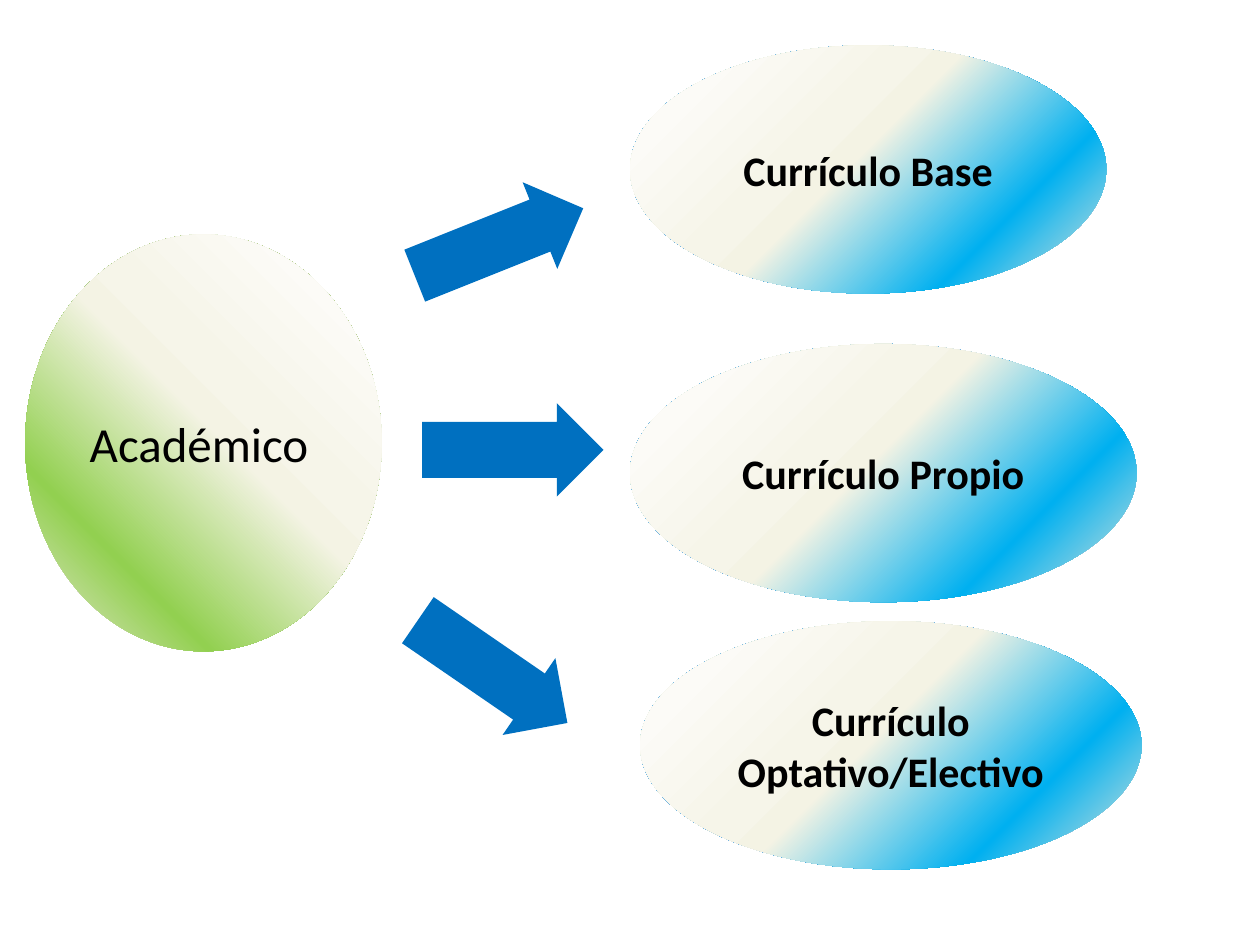
"""Build a slide linking an academic area to three kinds of curriculum."""
from lxml import etree
from pptx import Presentation
from pptx import util as u
from pptx.dml.color import RGBColor
from pptx.enum import shapes, text
from pptx.oxml import ns

WIDE, HIGH = u.Inches(10), u.Inches(7.5)
BLACK = RGBColor(0x00, 0x00, 0x00)
BLUE = RGBColor(0x00, 0x70, 0xC0)
GREEN = RGBColor(0x92, 0xD0, 0x50)
SKY = RGBColor(0x00, 0xB0, 0xF0)
PALE = [
    (0, RGBColor(0xFF, 0xFF, 0xFF)),
    (14, RGBColor(0xFC, 0xFB, 0xF7)),
    (38, RGBColor(0xF6, 0xF5, 0xE9)),
    (47, RGBColor(0xF4, 0xF3, 0xE4)),
]
SAND = RGBColor(0xEA, 0xE7, 0xD8)
LEFT, RIGHT = ("l", "b"), ("r", "b")


def place(slide, kind, box):
    """Add a plain shape in a box given in percent of the slide."""
    x, y, w, h = box
    shape = slide.shapes.add_shape(
        kind, int(WIDE * x / 100), int(HIGH * y / 100),
        int(WIDE * w / 100), int(HIGH * h / 100))
    shape.shadow.inherit = False
    shape.line.fill.background()
    return shape


def shade(shape, tint, sides):
    """Fill a shape with a circular gradient that starts in one corner."""
    shape.fill.background()
    old = shape._element.spPr.find(ns.qn("a:noFill"))
    grad = etree.Element(ns.qn("a:gradFill"), rotWithShape="1")
    stops = etree.SubElement(grad, ns.qn("a:gsLst"))
    for spot, color in PALE + [(76, tint), (100, SAND)]:
        stop = etree.SubElement(stops, ns.qn("a:gs"), pos=str(spot * 1000))
        etree.SubElement(stop, ns.qn("a:srgbClr"), val=str(color))
    ring = etree.SubElement(grad, ns.qn("a:path"), path="circle")
    etree.SubElement(ring, ns.qn("a:fillToRect"), {side: "100000" for side in sides})
    old.getparent().replace(old, grad)


def bubble(slide, box, words, tint, sides, size, bold, align):
    """Draw a shaded oval with its label."""
    oval = place(slide, shapes.MSO_SHAPE.FLOWCHART_CONNECTOR, box)
    shade(oval, tint, sides)
    frame = oval.text_frame
    frame.word_wrap = True
    frame.vertical_anchor = text.MSO_ANCHOR.MIDDLE
    frame.text = words
    line = frame.paragraphs[0]
    line.alignment = align
    font = line.runs[0].font
    font.name, font.size, font.bold = "Calibri", u.Pt(size), bold
    font.color.rgb = BLACK


def arrow(slide, x, y, turn):
    """Draw a turned block arrow."""
    shape = place(slide, shapes.MSO_SHAPE.LEFT_ARROW, (x, y, 14.4, 9.87))
    shape.adjustments[0], shape.adjustments[1] = 0.6, 0.5
    shape.rotation = turn
    shape.fill.solid()
    shape.fill.fore_color.rgb = BLUE


def main():
    """Compose and save the slide."""
    deck = Presentation()
    deck.slide_width, deck.slide_height = WIDE, HIGH
    slide = deck.slides.add_slide(deck.slide_layouts[6])
    bubble(slide, (2, 24.8, 28.3, 44.13), "Académico", GREEN, LEFT,
           28, False, text.PP_ALIGN.LEFT)
    for words, box in [
        ("Currículo Base", (50, 4.8, 37.8, 26.27)),
        ("Currículo Optativo/Electivo", (50.8, 65.73, 39.8, 26.27)),
        ("Currículo Propio", (50, 36.4, 40.2, 27.33)),
    ]:
        bubble(slide, box, words, SKY, RIGHT, 24, True, text.PP_ALIGN.CENTER)
    for x, y, turn in [(32.4, 20.67, 158.2), (31.9, 66.13, 214.5), (33.5, 42.67, 180)]:
        arrow(slide, x, y, turn)
    deck.save("out.pptx")


if __name__ == "__main__":
    main()
